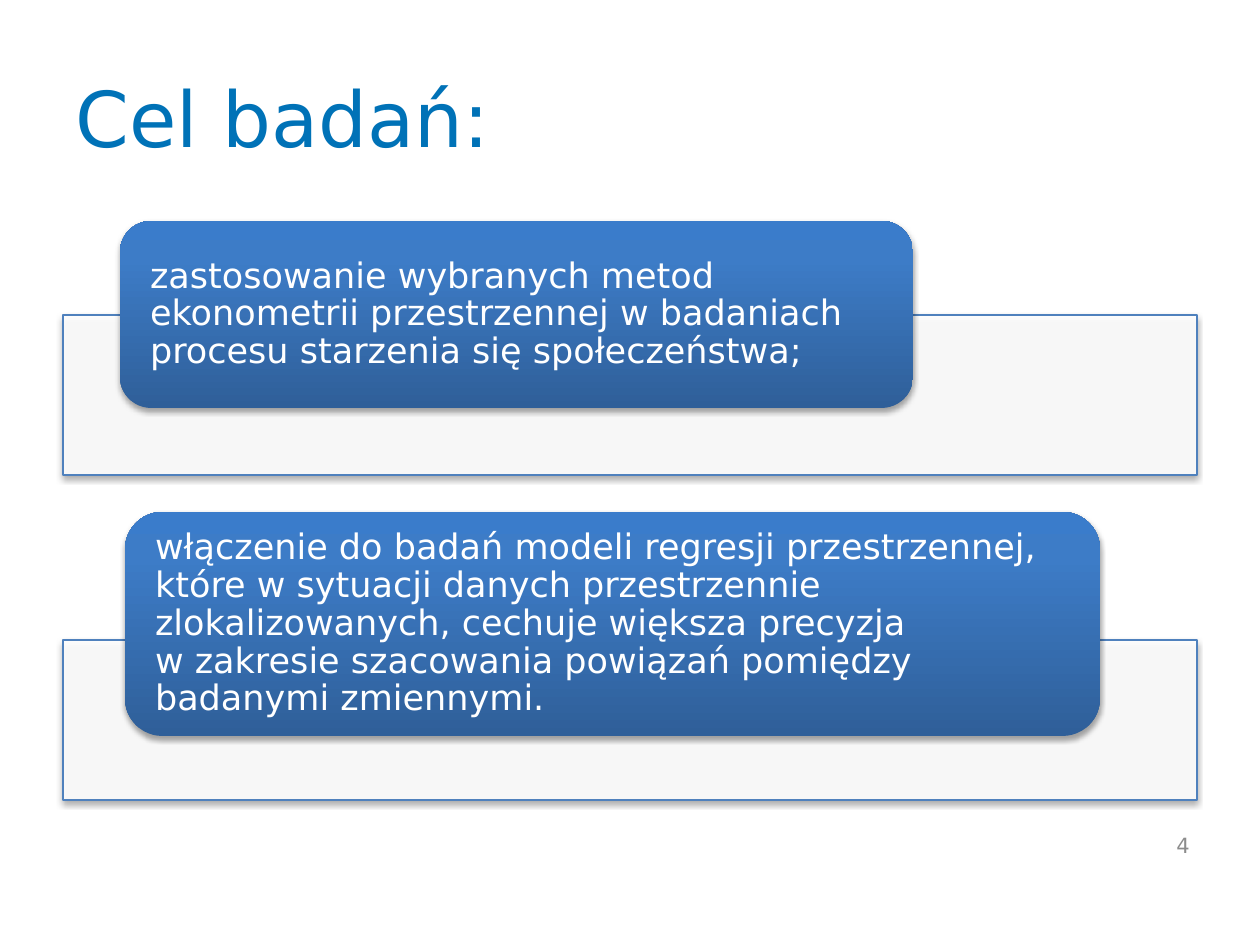
import pptx
import pptx.dml.color
import pptx.enum.shapes
import pptx.enum.text
import pptx.oxml
import pptx.oxml.ns
import pptx.util

EMU_PER_PX = 914400 / 126
FONT = "DejaVu Sans"
ROUNDING = 0.1667
COLORS = {
    "title": "0072B7",
    "panel": "FFFFFF",
    "outline": "4F81BD",
    "text": "FFFFFF",
    "number": "8C8C8C",
    "shadow": "000000",
}
GRADIENT = [(0, "2F5F99"), (80, "3D7CC7"), (100, "3A7CCB")]
GOALS = [
    {
        "panel": (63, 315, 1134, 160),
        "label": (120, 221, 793, 187),
        "lines": [
            "zastosowanie wybranych metod ekonometrii przestrzennej "
            "w badaniach procesu starzenia się społeczeństwa;"
        ],
    },
    {
        "panel": (63, 640, 1134, 160),
        "label": (125, 512, 975, 224),
        "lines": [
            "włączenie do badań modeli regresji przestrzennej, które w sytuacji "
            "danych przestrzennie zlokalizowanych, cechuje większa precyzja ",
            "w zakresie szacowania powiązań pomiędzy badanymi zmiennymi.",
        ],
    },
]


def px(length):
    """Turn px into EMU."""
    return pptx.util.Emu(round(length * EMU_PER_PX))


def rgb(name):
    """Look up a named colour."""
    return pptx.dml.color.RGBColor.from_string(COLORS[name])


def element(markup):
    """Parse a DrawingML element, adding its namespace."""
    tag, rest = markup.split(" ", 1)
    return pptx.oxml.parse_xml(f"{tag} {pptx.oxml.ns.nsdecls('a')} {rest}")


def add_span(para, text, size, color):
    """Add one formatted run."""
    span = para.add_run()
    span.text = text
    span.font.name = FONT
    span.font.size = pptx.util.Pt(size)
    span.font.color.rgb = rgb(color)


def add_shadow(shape):
    """Give a shape a soft shadow below it."""
    shape.shadow.inherit = False
    effects = shape._element.spPr.find(pptx.oxml.ns.qn("a:effectLst"))
    effects.append(element(
        f'<a:outerShdw blurRad="{pptx.util.Pt(3.1)}" dist="{pptx.util.Pt(1.8)}" '
        f'dir="5400000" rotWithShape="0"><a:srgbClr val="{COLORS["shadow"]}">'
        '<a:alpha val="35000"/></a:srgbClr></a:outerShdw>'))


def add_title(page, box, text):
    """Fill and place the title placeholder."""
    title = page.shapes.title
    title.left, title.top, title.width, title.height = map(px, box)
    title.text_frame.vertical_anchor = pptx.enum.text.MSO_ANCHOR.MIDDLE
    para = title.text_frame.paragraphs[0]
    para.alignment = pptx.enum.text.PP_ALIGN.LEFT
    add_span(para, text, 44, "title")


def add_panel(page, box):
    """Draw the outlined panel behind a label."""
    panel = page.shapes.add_shape(
        pptx.enum.shapes.MSO_SHAPE.RECTANGLE, *map(px, box))
    panel.fill.solid()
    panel.fill.fore_color.rgb = rgb("panel")
    color = panel._element.spPr.find(".//" + pptx.oxml.ns.qn("a:srgbClr"))
    color.append(element('<a:alpha val="90000"/>'))
    panel.line.color.rgb = rgb("outline")
    panel.line.width = pptx.util.Pt(0.75)
    add_shadow(panel)


def add_label(page, box, lines):
    """Draw a rounded gradient label holding its text."""
    label = page.shapes.add_shape(
        pptx.enum.shapes.MSO_SHAPE.ROUNDED_RECTANGLE, *map(px, box))
    label.adjustments[0] = ROUNDING
    label.line.fill.background()
    stops = "".join(
        f'<a:gs pos="{place * 1000}"><a:srgbClr val="{color}"/></a:gs>'
        for place, color in GRADIENT)
    geometry = label._element.spPr.find(pptx.oxml.ns.qn("a:prstGeom"))
    geometry.addnext(element(
        f'<a:gradFill rotWithShape="1"><a:gsLst>{stops}</a:gsLst>'
        '<a:lin ang="16200000" scaled="0"/></a:gradFill>'))
    add_shadow(label)
    frame = label.text_frame
    frame.word_wrap = True
    frame.vertical_anchor = pptx.enum.text.MSO_ANCHOR.MIDDLE
    corner = 0.29 * ROUNDING * box[3]
    frame.margin_left = frame.margin_right = px(30 - corner)
    frame.margin_top = frame.margin_bottom = 0
    para = frame.paragraphs[0]
    para.alignment = pptx.enum.text.PP_ALIGN.LEFT
    para.line_spacing = 0.9
    for index, line in enumerate(lines):
        if index:
            para.add_line_break()
        add_span(para, line, 20, "text")


def add_number(page, box, text):
    """Place the page number."""
    frame = page.shapes.add_textbox(*map(px, box)).text_frame
    frame.word_wrap = True
    frame.vertical_anchor = pptx.enum.text.MSO_ANCHOR.MIDDLE
    para = frame.paragraphs[0]
    para.alignment = pptx.enum.text.PP_ALIGN.RIGHT
    add_span(para, text, 12, "number")


def main():
    """Build and save the deck."""
    deck = pptx.Presentation()
    deck.slide_width, deck.slide_height = px(1260), px(945)
    page = deck.slides.add_slide(deck.slide_layouts[5])
    add_title(page, (63, 38, 1134, 158), "Cel badań:")
    for goal in GOALS:
        add_panel(page, goal["panel"])
        add_label(page, goal["label"], goal["lines"])
    add_number(page, (1116, 820, 86, 50), "4")
    deck.save("out.pptx")


if __name__ == "__main__":
    main()
